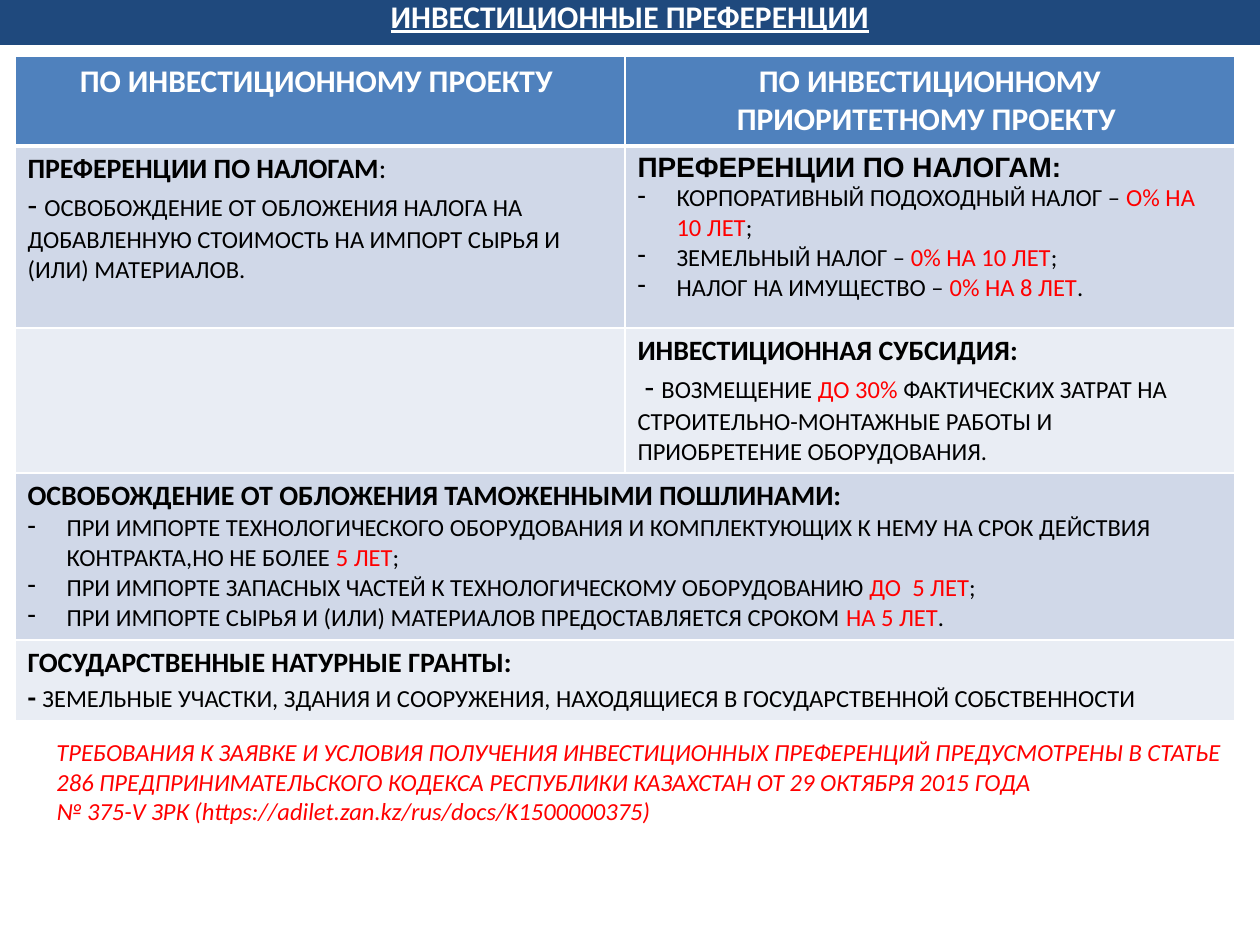
"""Build a slide comparing investment preferences by project type."""
from lxml.etree import SubElement
from pptx import Presentation
from pptx.dml.color import RGBColor
from pptx.enum.shapes import MSO_SHAPE
from pptx.enum.text import MSO_ANCHOR, PP_ALIGN
from pptx.oxml import parse_xml
from pptx.oxml.ns import nsdecls, qn
from pptx.util import Emu, Pt

WHITE = RGBColor(0xFF, 0xFF, 0xFF)
BLACK = RGBColor(0x00, 0x00, 0x00)
RED = RGBColor(0xFF, 0x00, 0x00)
NAVY = RGBColor(0x1F, 0x49, 0x7D)
BLUE = RGBColor(0x4F, 0x81, 0xBD)
BAND_DARK = RGBColor(0xD0, 0xD8, 0xE8)
BAND_LIGHT = RGBColor(0xE9, 0xED, 0xF4)

EMU_PER_PX = 914400 / 126
SLIDE_SIZE = (1260, 945)
TITLE_BOX = (0, -14, 1260, 59)
TABLE_ORIGIN = (15, 56)
COLUMN_WIDTH = 610
ROW_HEIGHTS = (90, 182, 145, 167, 80)
ROW_FILLS = (BLUE, BAND_DARK, BAND_LIGHT, BAND_DARK, BAND_LIGHT)
MERGED_ROWS = (3, 4)
BULLET_INDENT = 39
NOTE_BOX = (44, 731, 1191, 102)


def px(value):
    return Emu(round(value * EMU_PER_PX))


def run(text, size=14, bold=False, color=BLACK, font="Calibri"):
    return {"text": text, "size": size, "bold": bold, "color": color, "font": font}


def column_title(text):
    return "title", [run(text, 18, True, WHITE)]


def heading(text, font="Calibri"):
    return "plain", [run(text, 16, True, font=font)]


def bullet(before, highlight, after):
    return "bullet", [run(before), run(highlight, color=RED), run(after)]


TITLE = "ИНВЕСТИЦИОННЫЕ ПРЕФЕРЕНЦИИ"
NOTE = (
    "ТРЕБОВАНИЯ К ЗАЯВКЕ И УСЛОВИЯ ПОЛУЧЕНИЯ ИНВЕСТИЦИОННЫХ ПРЕФЕРЕНЦИЙ ПРЕДУСМОТРЕНЫ В "
    "СТАТЬЕ 286 ПРЕДПРИНИМАТЕЛЬСКОГО КОДЕКСА РЕСПУБЛИКИ КАЗАХСТАН ОТ 29 ОКТЯБРЯ 2015 ГОДА \v"
    "№ 375-V ЗРК (https://adilet.zan.kz/rus/docs/K1500000375)"
)
TABLE_ROWS = [
    [
        [column_title("ПО ИНВЕСТИЦИОННОМУ ПРОЕКТУ ")],
        [column_title("ПО ИНВЕСТИЦИОННОМУ ПРИОРИТЕТНОМУ ПРОЕКТУ ")],
    ],
    [
        [
            ("plain", [run("ПРЕФЕРЕНЦИИ ПО НАЛОГАМ", 16, True), run(":", 16)]),
            ("plain", [
                run("- ", 18),
                run("ОСВОБОЖДЕНИЕ ОТ ОБЛОЖЕНИЯ НАЛОГА НА ДОБАВЛЕННУЮ СТОИМОСТЬ "
                    "НА ИМПОРТ СЫРЬЯ И (ИЛИ) МАТЕРИАЛОВ."),
            ]),
        ],
        [
            heading("ПРЕФЕРЕНЦИИ ПО НАЛОГАМ:", "Arial"),
            bullet("КОРПОРАТИВНЫЙ ПОДОХОДНЫЙ НАЛОГ – ", "О% НА 10 ЛЕТ", ";"),
            bullet("ЗЕМЕЛЬНЫЙ НАЛОГ – ", "0% НА 10 ЛЕТ", ";"),
            bullet("НАЛОГ НА ИМУЩЕСТВО – ", "0% НА 8 ЛЕТ", "."),
        ],
    ],
    [
        [],
        [
            heading("ИНВЕСТИЦИОННАЯ СУБСИДИЯ:"),
            ("plain", [
                run(" - ", 18),
                run("ВОЗМЕЩЕНИЕ "),
                run("ДО 30% ", color=RED),
                run("ФАКТИЧЕСКИХ ЗАТРАТ НА СТРОИТЕЛЬНО-МОНТАЖНЫЕ РАБОТЫ И "
                    "ПРИОБРЕТЕНИЕ ОБОРУДОВАНИЯ."),
            ]),
        ],
    ],
    [
        [
            heading("ОСВОБОЖДЕНИЕ ОТ ОБЛОЖЕНИЯ ТАМОЖЕННЫМИ ПОШЛИНАМИ:"),
            bullet("ПРИ ИМПОРТЕ ТЕХНОЛОГИЧЕСКОГО ОБОРУДОВАНИЯ И КОМПЛЕКТУЮЩИХ К НЕМУ "
                   "НА СРОК ДЕЙСТВИЯ КОНТРАКТА,НО НЕ БОЛЕЕ ", "5 ЛЕТ", ";"),
            bullet("ПРИ ИМПОРТЕ ЗАПАСНЫХ ЧАСТЕЙ К ТЕХНОЛОГИЧЕСКОМУ ОБОРУДОВАНИЮ ",
                   "ДО  5 ЛЕТ", ";"),
            bullet("ПРИ ИМПОРТЕ СЫРЬЯ И (ИЛИ) МАТЕРИАЛОВ ПРЕДОСТАВЛЯЕТСЯ СРОКОМ ",
                   "НА 5 ЛЕТ", "."),
        ],
        [],
    ],
    [
        [
            heading("ГОСУДАРСТВЕННЫЕ НАТУРНЫЕ ГРАНТЫ:"),
            ("plain", [
                run("- ", 16, True),
                run("ЗЕМЕЛЬНЫЕ УЧАСТКИ, ЗДАНИЯ И СООРУЖЕНИЯ, НАХОДЯЩИЕСЯ В "
                    "ГОСУДАРСТВЕННОЙ СОБСТВЕННОСТИ"),
            ]),
        ],
        [],
    ],
]


def set_font(font, size, color, bold=False, name="Calibri"):
    font.size = Pt(size)
    font.color.rgb = color
    font.bold = bold
    font.name = name


def add_bullet(paragraph):
    properties = paragraph._p.get_or_add_pPr()
    properties.set("marL", str(px(BULLET_INDENT)))
    properties.set("indent", str(-px(BULLET_INDENT)))
    SubElement(properties, qn("a:buChar")).set("char", "-")


def add_borders(cell, widths):
    properties = cell._tc.get_or_add_tcPr()
    for position, (side, width) in enumerate(widths.items()):
        properties.insert(position, parse_xml(
            f'<a:ln{side} {nsdecls("a")} w="{Pt(width)}"><a:solidFill>'
            f'<a:srgbClr val="{WHITE}"/></a:solidFill></a:ln{side}>'
        ))


def fill_cell(cell, paragraphs):
    for index, (kind, runs) in enumerate(paragraphs):
        frame = cell.text_frame
        paragraph = frame.add_paragraph() if index else frame.paragraphs[0]
        if kind == "title":
            paragraph.alignment = PP_ALIGN.CENTER
        elif kind == "bullet":
            add_bullet(paragraph)
        for part in runs:
            text_run = paragraph.add_run()
            text_run.text = part["text"]
            set_font(text_run.font, part["size"], part["color"], part["bold"], part["font"])


def add_title(slide):
    banner = slide.shapes.add_shape(MSO_SHAPE.RECTANGLE, *map(px, TITLE_BOX))
    banner.shadow.inherit = False
    banner.fill.solid()
    banner.fill.fore_color.rgb = NAVY
    banner.line.fill.background()
    banner.text_frame.text = TITLE
    banner.text_frame.vertical_anchor = MSO_ANCHOR.MIDDLE
    paragraph = banner.text_frame.paragraphs[0]
    paragraph.alignment = PP_ALIGN.CENTER
    font = paragraph.runs[0].font
    set_font(font, 18, WHITE, bold=True)
    font.underline = True


def add_preferences_table(slide):
    size = (2 * COLUMN_WIDTH, sum(ROW_HEIGHTS))
    table = slide.shapes.add_table(len(TABLE_ROWS), 2, *map(px, TABLE_ORIGIN + size)).table
    for column in table.columns:
        column.width = px(COLUMN_WIDTH)
    for row_index, row in enumerate(TABLE_ROWS):
        table.rows[row_index].height = px(ROW_HEIGHTS[row_index])
        widths = {"L": 1, "R": 1, "T": 3 if row_index == 1 else 1, "B": 1 if row_index else 3}
        for column_index, paragraphs in enumerate(row):
            cell = table.cell(row_index, column_index)
            cell.fill.solid()
            cell.fill.fore_color.rgb = ROW_FILLS[row_index]
            add_borders(cell, widths)
            fill_cell(cell, paragraphs)
    for row_index in MERGED_ROWS:
        table.cell(row_index, 0).merge(table.cell(row_index, 1))


def add_note(slide):
    frame = slide.shapes.add_textbox(*map(px, NOTE_BOX)).text_frame
    frame.word_wrap = True
    frame.text = NOTE
    for text_run in frame.paragraphs[0].runs:
        set_font(text_run.font, 14, RED)
        text_run.font.italic = True


def main():
    presentation = Presentation()
    presentation.slide_width, presentation.slide_height = map(px, SLIDE_SIZE)
    slide = presentation.slides.add_slide(presentation.slide_layouts[6])
    add_title(slide)
    add_preferences_table(slide)
    add_note(slide)
    presentation.save("out.pptx")


if __name__ == "__main__":
    main()
